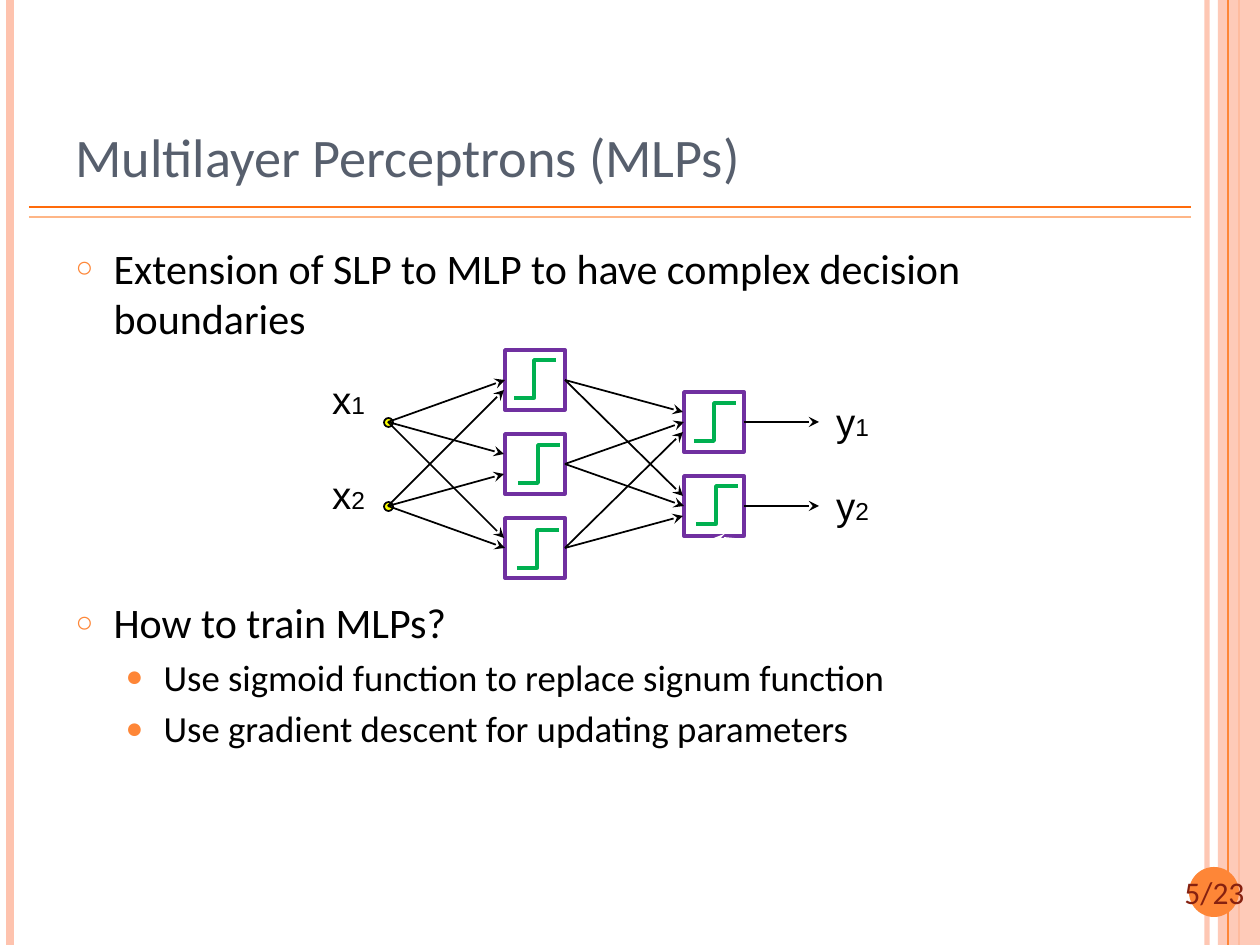
from dataclasses import dataclass
from math import cos, pi, sin

from lxml import etree
from pptx import Presentation
from pptx.dml.color import RGBColor
from pptx.enum.shapes import MSO_CONNECTOR, MSO_SHAPE
from pptx.enum.text import MSO_ANCHOR, MSO_AUTO_SIZE, PP_ALIGN
from pptx.oxml.ns import qn
from pptx.util import Pt

LINE = MSO_CONNECTOR.STRAIGHT
RECT, OVAL = MSO_SHAPE.RECTANGLE, MSO_SHAPE.OVAL
TOP, BOTTOM = MSO_ANCHOR.TOP, MSO_ANCHOR.BOTTOM
LEFT, CENTER = PP_ALIGN.LEFT, PP_ALIGN.CENTER
NO_FIT = MSO_AUTO_SIZE.NONE
SCALE = 914400 / 126


@dataclass(frozen=True)
class Theme:
    sans: str = "Calibri"
    plain: str = "Arial"
    black: str = "000000"
    white: str = "FFFFFF"
    slate: str = "575F6D"
    peach: str = "FEC3AE"
    orange: str = "FE8637"
    deep: str = "FF6B0A"
    pale: str = "FEB687"
    brown: str = "862110"
    purple: str = "7030A0"
    green: str = "00B050"
    yellow: str = "FAFD00"
    title: int = 31
    list: int = 24
    sub: int = 21
    page: int = 18
    mark: int = 22
    index: int = 14


THEME = Theme()


def px(n):
    return round(n * SCALE)


def rgb(code):
    return RGBColor.from_string(code)


def node(parent, tag, **attrs):
    return etree.SubElement(parent, qn(tag), **attrs)


def fade(shape, share):
    for color in shape._element.spPr.iter(qn("a:srgbClr")):
        node(color, "a:alpha", val=str(share * 1000))


def write(para, text, size, color=THEME.black, font=THEME.sans, align=LEFT,
          before=0, space=None):
    para.alignment = align
    para.space_before = Pt(before)
    if space:
        para.line_spacing = space
    run = para.add_run()
    run.text = text
    run.font.size = Pt(size)
    run.font.name = font
    run.font.color.rgb = rgb(color)


def style(shape, fill=None, line=None, width=1):
    shape.shadow.inherit = False
    if fill:
        shape.fill.solid()
        shape.fill.fore_color.rgb = rgb(fill)
    else:
        shape.fill.background()
    if line:
        shape.line.color.rgb = rgb(line)
        shape.line.width = Pt(width)
    else:
        shape.line.fill.background()
    return shape


def block(slide, kind, box, **look):
    return style(slide.shapes.add_shape(kind, *map(px, box)), **look)


def rule(slide, start, end, color=THEME.black, width=1, arrow=False):
    line = slide.shapes.add_connector(LINE, *map(px, (*start, *end)))
    line.line.color.rgb = rgb(color)
    line.line.width = Pt(width)
    if arrow:
        node(line.line._get_or_add_ln(), "a:tailEnd", type="stealth")
    node(line._element.spPr, "a:effectLst")
    return line


def trace(slide, points, color):
    pen = slide.shapes.build_freeform(*points[0], scale=SCALE)
    pen.add_line_segments(points[1:], close=False)
    return style(pen.convert_to_shape(), line=color, width=2)


def place(shape, box):
    shape.left, shape.top, shape.width, shape.height = map(px, box)
    return shape.text_frame


def label(slide, box, wrap=False):
    frame = slide.shapes.add_textbox(*map(px, box)).text_frame
    frame.word_wrap = wrap
    return frame.paragraphs[0]


def bullet(para, char, size, inset):
    props = para._p.get_or_add_pPr()
    props.set("marL", str(px(inset)))
    props.set("indent", str(-px(38)))
    node(node(props, "a:buClr"), "a:srgbClr", val=THEME.orange)
    node(props, "a:buSzPct", val=str(size * 1000))
    node(props, "a:buFont", typeface=THEME.plain)
    node(props, "a:buChar", char=char)


def border(slide, box):
    x, y, w, h = box

    def post(dx, color, width):
        return rule(slide, (x + dx, y), (x + dx, y + h), color, width)

    fade(post(1207, THEME.peach, 3), 93)
    post(10, THEME.peach, 4.5)
    post(1239, THEME.orange, 1.5)
    fade(block(slide, RECT, (x + w - 42, y, 42, h), fill=THEME.peach), 87)
    post(1228, THEME.orange, 0.75)
    for dy, color in ((207, THEME.deep), (217, THEME.pale)):
        rule(slide, (x + 29, y + dy), (x + 1191, y + dy), color)


def badge(slide, box):
    x, y, w, h = box
    block(slide, OVAL, (x + 32, y, h, h), fill=THEME.orange)
    write(label(slide, box, True), "5/23", THEME.page, THEME.brown, align=CENTER)


def header(slide, box):
    frame = place(slide.shapes.title, box)
    frame.auto_size = NO_FIT
    frame.vertical_anchor = BOTTOM
    write(frame.paragraphs[0], "Multilayer Perceptrons (MLPs)", THEME.title, THEME.slate)


def body(slide, box):
    frame = place(slide.placeholders[1], box)
    frame.auto_size = NO_FIT
    frame.vertical_anchor = TOP
    items = (
        ("Extension of SLP to MLP to have complex decision boundaries", 0, 0),
        ("How to train MLPs?", 0, 145),
        ("Use sigmoid function to replace signum function", 1, 4.2),
        ("Use gradient descent for updating parameters", 1, 4.2),
    )
    looks = (("○", 70, 38, THEME.list), ("●", 80, 88, THEME.sub))
    for i, (text, level, before) in enumerate(items):
        para = frame.add_paragraph() if i else frame.paragraphs[0]
        para.level = level
        *mark, size = looks[level]
        bullet(para, *mark)
        write(para, text, size, before=before)


def unit(slide, x, y, dx, dy):
    cell = block(slide, RECT, (x, y, 60, 60), line=THEME.purple, width=2)
    left, top = x + dx, y + dy
    trace(slide, [(left, top + 38), (left + 20, top + 38), (left + 20, top),
                  (left + 42, top)], THEME.green)
    return cell


def network(slide, box):
    x, y, w, h = box
    gap = 84
    hidden = [unit(slide, x + 186, y + gap * i, *shift)
              for i, shift in enumerate(((9, 10), (13, 11), (12, 12)))]
    output = [unit(slide, x + 365, y + 42 + gap * i, *shift)
              for i, shift in enumerate(((10, 11), (12, 10)))]

    def link(start, end, source=None, target=None):
        line = rule(slide, start, end, arrow=True)
        if source:
            line.begin_connect(source, 3)
        if target:
            line.end_connect(target, 1)

    for i, shifts in enumerate(((0, -10, -10), (10, 10, 0))):
        mid = y + 72 + gap * i
        block(slide, OVAL, (x + 65, mid - 4, 9, 9), fill=THEME.yellow, line=THEME.black)
        for j, shift in enumerate(shifts):
            link((x + 69, mid), (x + 185, y + 30 + gap * j + shift),
                 target=None if shift else hidden[j])
        for j, cell in enumerate(hidden):
            shift = 10 * (j - 1)
            link((x + 246, y + 30 + gap * j), (x + 364, mid + shift),
                 cell, None if shift else output[i])
        link((x + 425, mid), (x + w, mid), output[i])

    for sign, index, dx, dy in (("x", "1", 0, 34), ("x", "2", 0, 129),
                                ("y", "1", 504, 56), ("y", "2", 504, 140)):
        para = label(slide, (x + dx, y + dy, 59, 44))
        for text, size in ((sign, THEME.mark), (index, THEME.index)):
            write(para, text, size, font=THEME.plain, align=CENTER, space=0.65)

    turns = [pi * i / 24 for i in range(13)]
    arc = trace(slide, [(x + 395 + 84 * sin(t), y + h + 33 - 73 * cos(t))
                        for t in turns], THEME.white)
    node(arc.line._get_or_add_ln(), "a:headEnd", type="stealth")


def main():
    deck = Presentation()
    deck.slide_width, deck.slide_height = px(1260), px(945)
    slide = deck.slides.add_slide(deck.slide_layouts[1])
    border(slide, (0, 0, 1260, 945))
    badge(slide, (1157, 867, 115, 50))
    body(slide, (63, 236, 1053, 656))
    header(slide, (63, 38, 1029, 157))
    network(slide, (319, 350, 500, 228))
    deck.save("out.pptx")


if __name__ == "__main__":
    main()
